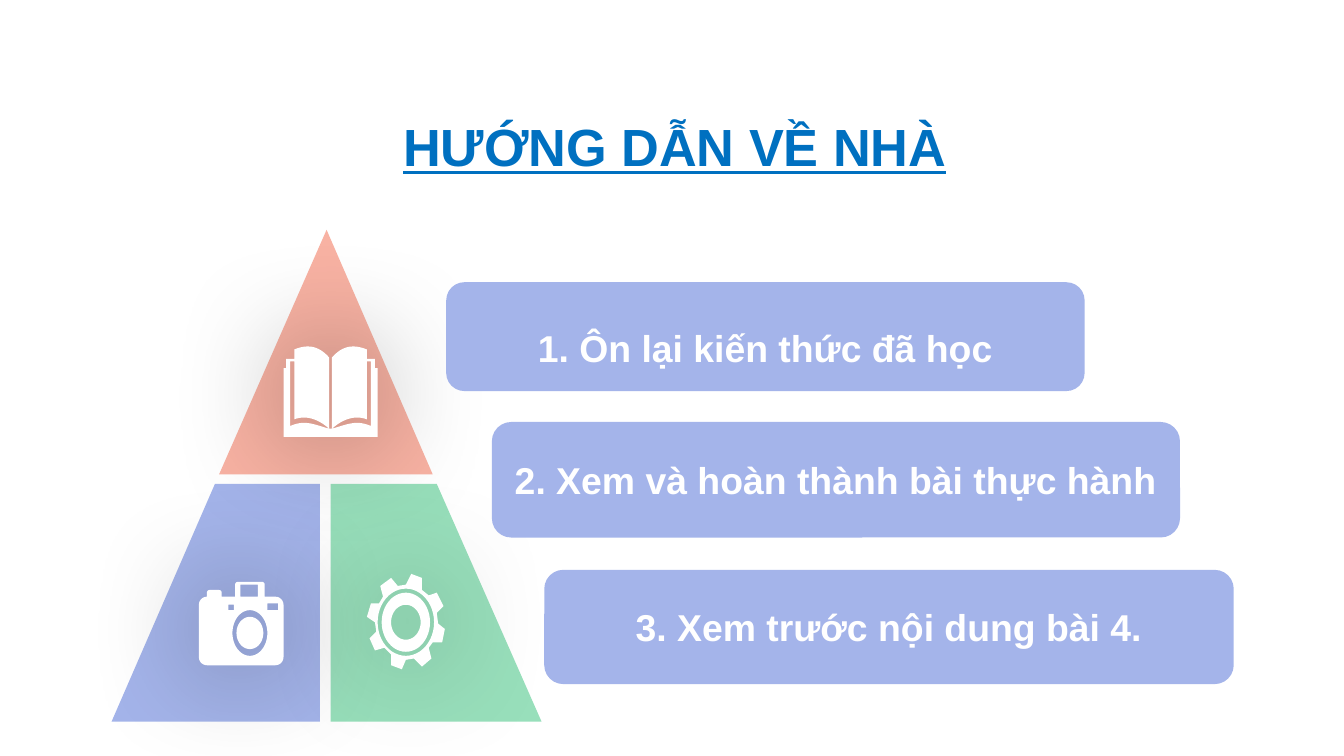
from math import cos, pi, sin
from typing import NamedTuple

from lxml.etree import SubElement
from pptx import Presentation
from pptx.dml.color import RGBColor
from pptx.enum.shapes import MSO_SHAPE as Shape
from pptx.enum.text import MSO_ANCHOR as Anchor, MSO_AUTO_SIZE as Fit, PP_ALIGN as Align
from pptx.oxml.ns import qn
from pptx.util import Inches, Pt

BLUE = RGBColor(0x00, 0x70, 0xC0)
CORAL = RGBColor(0xF8, 0xB2, 0xA3)
GREEN = RGBColor(0x98, 0xDF, 0xBB)
LILAC = RGBColor(0xA4, 0xB4, 0xEA)
WHITE = RGBColor(0xFF, 0xFF, 0xFF)

Point = tuple[float, float]
Loop = list[Point]


class Part(NamedTuple):
    loop: Loop
    color: RGBColor


class Step(NamedTuple):
    left: float
    top: float
    width: float
    height: float
    text: str
    spacing: float = 1.0


PARTS = [
    Part([(2.43, 1.71), (3.22, 3.53), (1.63, 3.53)], CORAL),
    Part([(2.46, 3.6), (3.25, 3.6), (4.03, 5.37), (2.46, 5.37)], GREEN),
    Part([(1.6, 3.6), (2.38, 3.6), (2.38, 5.37), (0.83, 5.37)], LILAC),
]
STEPS = [
    Step(3.32, 2.1, 4.75, 0.81, "1. Ôn lại kiến thức đã học", 1.5),
    Step(3.66, 3.14, 5.12, 0.86, "2. Xem và hoàn thành bài thực hành"),
    Step(4.05, 4.24, 5.13, 0.85, "3. Xem trước nội dung bài 4."),
]
GEAR = [
    (3.06, 4.27), (3.14, 4.3), (3.14, 4.39), (3.19, 4.43), (3.25, 4.41), (3.3, 4.51),
    (3.25, 4.56), (3.26, 4.64), (3.31, 4.68), (3.29, 4.78), (3.22, 4.78), (3.19, 4.82),
    (3.21, 4.9), (3.14, 4.96), (3.08, 4.9), (3.02, 4.91), (2.99, 4.98), (2.91, 4.95),
    (2.91, 4.87), (2.86, 4.82), (2.79, 4.84), (2.75, 4.75), (2.8, 4.7), (2.79, 4.63),
    (2.73, 4.59), (2.76, 4.49), (2.82, 4.49), (2.85, 4.44), (2.83, 4.36), (2.91, 4.3),
    (2.96, 4.36), (3.02, 4.35),
]


def curve(a: Point, b: Point, c: Point, d: Point, count: int = 12) -> Loop:
    """Sample a cubic Bézier curve."""
    loop = []
    for i in range(count + 1):
        t = i / count
        u = 1 - t
        mix = (u**3, 3 * u * u * t, 3 * u * t * t, t**3)
        loop.append((sum(m * p[0] for m, p in zip(mix, (a, b, c, d))),
                     sum(m * p[1] for m, p in zip(mix, (a, b, c, d)))))
    return loop


def oval(x: float, y: float, rx: float, ry: float, count: int = 48) -> Loop:
    turns = [2 * pi * i / count for i in range(count)]
    return [(x + rx * cos(t), y + ry * sin(t)) for t in turns]


def rect(left: float, top: float, right: float, bottom: float) -> Loop:
    return [(left, top), (right, top), (right, bottom), (left, bottom)]


def soften(corners: list[tuple[float, float, float]]) -> Loop:
    """Round each (x, y, radius) corner of a right-angled outline."""
    loop = []
    for i, (x, y, r) in enumerate(corners):
        ends, pulls = [], []
        for px, py, _ in (corners[i - 1], corners[(i + 1) % len(corners)]):
            span = abs(px - x) + abs(py - y)
            dx, dy = (px - x) * r / span, (py - y) * r / span
            ends.append((x + dx, y + dy))
            pulls.append((x + 0.45 * dx, y + 0.45 * dy))
        loop += curve(ends[0], *pulls, ends[1], 6) if r else [(x, y)]
    return loop


def flip(loop: Loop, axis: float) -> Loop:
    return [(2 * axis - x, y) for x, y in reversed(loop)]


def book() -> list[Loop]:
    axis = 2.46
    cover = [(2.11, 3.25), (2.11, 2.74), (2.13, 2.74), (2.13, 2.67), (2.19, 2.67)]
    cover += curve((2.19, 2.6), (2.29, 2.56), (2.37, 2.57), (2.45, 2.66)) + [(2.45, 3.19)]
    edge = [(2.16, 2.69), (2.19, 2.69)]
    edge += curve((2.19, 3.12), (2.27, 3.09), (2.36, 3.11), (2.45, 3.19))
    edge += curve((2.45, 3.19), (2.34, 3.16), (2.27, 3.12), (2.16, 3.17))
    return [cover + flip(cover, axis), edge, flip(edge, axis)]


def gear() -> list[Loop]:
    radii = [(0.21, 0.25), (0.18, 0.22), (0.11, 0.13)]
    return [GEAR] + [oval(3.02, 4.63, rx, ry) for rx, ry in radii]


def camera() -> list[Loop]:
    body = soften([
        (1.75, 4.33, 0.02), (1.97, 4.33, 0.02), (1.97, 4.44, 0), (2.11, 4.44, 0.06),
        (2.11, 4.95, 0.06), (1.48, 4.95, 0.06), (1.48, 4.44, 0.06), (1.54, 4.44, 0),
        (1.54, 4.39, 0.02), (1.65, 4.39, 0.02), (1.65, 4.44, 0), (1.75, 4.44, 0),
    ])
    return [body, rect(1.79, 4.35, 1.92, 4.44), rect(1.7, 4.5, 1.74, 4.54),
            rect(1.99, 4.49, 2.07, 4.54), oval(1.86, 4.71, 0.13, 0.17),
            oval(1.86, 4.71, 0.1, 0.12)]


def draw(shapes, loops: list[Loop], color: RGBColor):
    """Draw closed loops as one shape; inner loops cut holes."""
    pen = None
    for loop in loops:
        first, *rest = [(Inches(x), Inches(y)) for x, y in loop]
        if pen is None:
            pen = shapes.build_freeform(*first)
        else:
            pen.move_to(*first)
        pen.add_line_segments(rest)
    return paint(pen.convert_to_shape(), color)


def paint(shape, color: RGBColor):
    shape.shadow.inherit = False
    shape.fill.solid()
    shape.fill.fore_color.rgb = color
    shape.line.fill.background()
    return shape


def glow(shape) -> None:
    """Give the shape a wide, soft dark shadow."""
    effects = shape.element.spPr.find(qn("a:effectLst"))
    shade = SubElement(effects, qn("a:outerShdw"), blurRad=str(Pt(63)), dist="0",
                       dir="0", algn="ctr", rotWithShape="0")
    color = SubElement(shade, qn("a:srgbClr"), val="000000")
    SubElement(color, qn("a:alpha"), val="40000")


def write(shape, text: str, size: int, color: RGBColor, spacing: float = 1.0):
    frame = shape.text_frame
    frame.word_wrap = True
    frame.auto_size = Fit.NONE
    frame.vertical_anchor = Anchor.MIDDLE
    para = frame.paragraphs[0]
    para.alignment = Align.CENTER
    para.line_spacing = spacing
    run = para.add_run()
    run.text = text
    font = run.font
    font.name, font.size, font.bold = "Arial", Pt(size), True
    font.color.rgb = color
    return font


def main() -> None:
    deck = Presentation()
    deck.slide_width = Inches(10)
    deck.slide_height = deck.slide_width * 9 // 16
    slide = deck.slides.add_slide(deck.slide_layouts[5])
    shapes = slide.shapes

    title = shapes.title
    title.left, title.top = Inches(0.02), Inches(0.77)
    title.width, title.height = Inches(10), Inches(0.63)
    write(title, "HƯỚNG DẪN VỀ NHÀ", 28, BLUE).underline = True

    pyramid = shapes.add_group_shape().shapes
    for part in PARTS:
        draw(pyramid, [part.loop], part.color)
    for icon in (book(), gear(), camera()):
        glow(draw(shapes, icon, WHITE))

    for step in STEPS:
        box = shapes.add_shape(Shape.ROUNDED_RECTANGLE, *map(Inches, step[:4]))
        paint(box, LILAC)
        write(box, step.text, 20, WHITE, step.spacing)

    deck.save("out.pptx")


if __name__ == "__main__":
    main()
